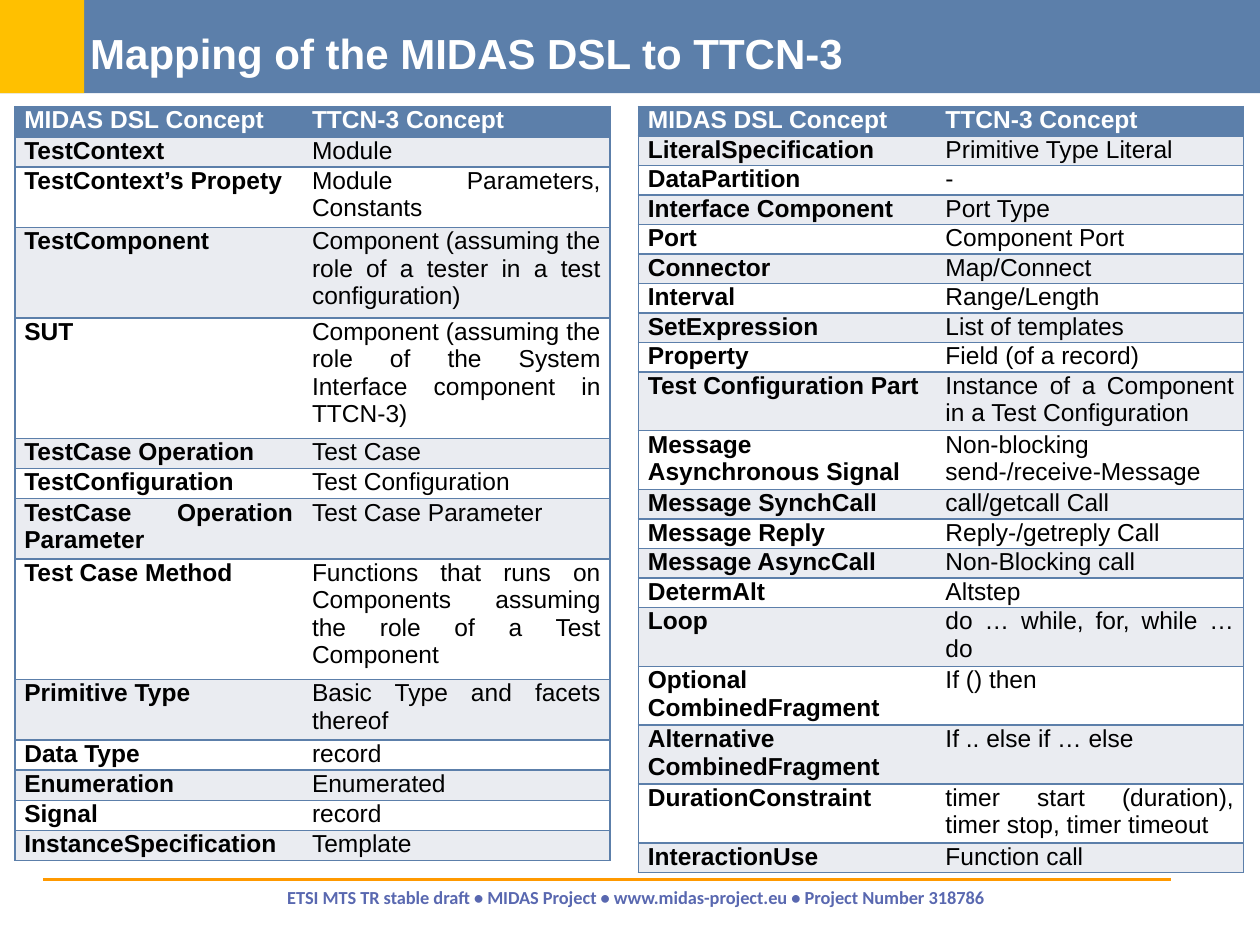
from lxml.etree import SubElement
from pptx import Presentation
from pptx.dml.color import RGBColor
from pptx.enum.shapes import MSO_CONNECTOR, MSO_SHAPE
from pptx.enum.text import MSO_ANCHOR, PP_ALIGN
from pptx.oxml.ns import qn
from pptx.util import Cm, Pt

BLUE = RGBColor(0x5C, 0x7F, 0xAA)
GOLD = RGBColor(0xFF, 0xC0, 0x00)
ORANGE = RGBColor(0xFF, 0x99, 0x00)
VIOLET = RGBColor(0x59, 0x68, 0xB0)
BAND = RGBColor(0xEA, 0xEC, 0xF1)
WHITE = RGBColor(0xFF, 0xFF, 0xFF)
BLACK = RGBColor(0x00, 0x00, 0x00)

HEAD = ("MIDAS DSL Concept", "TTCN-3 Concept", 1)

# Each row: DSL concept, TTCN-3 concept, number of text lines
LEFT = [
    HEAD,
    ("TestContext", "Module", 1),
    ("TestContext’s Propety", "Module Parameters, Constants", 2),
    ("TestComponent", "Component (assuming the role of a tester in a test configuration)", 3),
    ("SUT", "Component (assuming the role of the System Interface component in TTCN-3)", 4),
    ("TestCase Operation", "Test Case", 1),
    ("TestConfiguration", "Test Configuration", 1),
    ("TestCase Operation Parameter", "Test Case Parameter", 2),
    ("Test Case Method",
     "Functions that runs on Components assuming the role of a Test Component", 4),
    ("Primitive Type", "Basic Type and facets thereof", 2),
    ("Data Type", "record", 1),
    ("Enumeration", "Enumerated", 1),
    ("Signal", "record", 1),
    ("InstanceSpecification", "Template", 1),
]
RIGHT = [
    HEAD,
    ("LiteralSpecification", "Primitive Type Literal", 1),
    ("DataPartition", "-", 1),
    ("Interface Component", "Port Type", 1),
    ("Port", "Component Port", 1),
    ("Connector", "Map/Connect", 1),
    ("Interval", "Range/Length", 1),
    ("SetExpression", "List of templates", 1),
    ("Property", "Field (of a record)", 1),
    ("Test Configuration Part", "Instance of a Component in a Test Configuration", 2),
    ("Message Asynchronous Signal", "Non-blocking send-/receive-Message", 2),
    ("Message SynchCall", "call/getcall Call", 1),
    ("Message Reply", "Reply-/getreply Call", 1),
    ("Message AsyncCall", "Non-Blocking call", 1),
    ("DetermAlt", "Altstep", 1),
    ("Loop", "do … while, for, while … do", 2),
    ("Optional CombinedFragment", "If () then", 2),
    ("Alternative CombinedFragment", "If .. else if … else", 2),
    ("DurationConstraint", "timer start (duration), timer stop, timer timeout", 2),
    ("InteractionUse", "Function call", 1),
]


class Deck:
    face = "Arial"
    size = 14

    def __init__(self, slide):
        self.slide = slide

    def font(self, para, size, color, bold=True, face=face):
        font = para.font
        font.name, font.size, font.bold = face, Pt(size), bold
        font.color.rgb = color

    def rect(self, x, y, w, h, color):
        box = self.slide.shapes.add_shape(MSO_SHAPE.RECTANGLE, Cm(x), Cm(y), Cm(w), Cm(h))
        box.shadow.inherit = False
        box.fill.solid()
        box.fill.fore_color.rgb = color
        box.line.fill.background()

    def line(self, x1, y1, x2, y2, color, width):
        rule = self.slide.shapes.add_connector(
            MSO_CONNECTOR.STRAIGHT, Cm(x1), Cm(y1), Cm(x2), Cm(y2))
        rule.line.color.rgb = color
        rule.line.width = Pt(width)
        SubElement(rule.element.spPr, qn("a:effectLst"))

    def text(self, x, y, w, h, words, size, color, face=face):
        frame = self.slide.shapes.add_textbox(Cm(x), Cm(y), Cm(w), Cm(h)).text_frame
        frame.word_wrap = True
        frame.vertical_anchor = MSO_ANCHOR.MIDDLE
        para = frame.paragraphs[0]
        para.text = words
        self.font(para, size, color, face=face)

    def edge(self, cell, side, color=None):
        ln = SubElement(cell._tc.get_or_add_tcPr(), qn(f"a:ln{side}"), w=str(Pt(1)))
        if color is None:
            SubElement(ln, qn("a:noFill"))
        else:
            fill = SubElement(ln, qn("a:solidFill"))
            SubElement(fill, qn("a:srgbClr"), val=str(color))

    def cell(self, cell, words, fill, color, bold, outer):
        cell.margin_left = cell.margin_right = Cm(0.19)
        cell.margin_top = cell.margin_bottom = 0
        for side in "LRTB":
            self.edge(cell, side, BLUE if side in outer else None)
        cell.fill.solid()
        cell.fill.fore_color.rgb = fill
        para = cell.text_frame.paragraphs[0]
        para.text = words
        para.alignment = PP_ALIGN.JUSTIFY
        self.font(para, self.size, color, bold)

    def table(self, x, y, cols, high, rows):
        unit = high / sum(lines for *_, lines in rows)
        grid = self.slide.shapes.add_table(
            len(rows), len(cols), Cm(x), Cm(y), Cm(sum(cols)), Cm(high)).table
        grid.horz_banding = False
        for col, width in zip(grid.columns, cols):
            col.width = Cm(width)
        for i, (*pair, lines) in enumerate(rows):
            grid.rows[i].height = Cm(unit * lines)
            head = i == 0
            fill = BLUE if head else BAND if i % 2 else WHITE
            color = WHITE if head else BLACK
            for j, words in enumerate(pair):
                self.cell(grid.cell(i, j), words, fill, color,
                          head or j == 0, "RTB" if j else "LTB")


def main():
    show = Presentation()
    show.slide_width, show.slide_height = Cm(25.4), Cm(19.05)
    deck = Deck(show.slides.add_slide(show.slide_layouts[6]))

    # Title bar
    deck.rect(0, 0, 25.4, 1.88, BLUE)
    deck.rect(0, 0, 1.7, 1.88, GOLD)
    deck.text(1.57, 0.41, 23.83, 1.3, "Mapping of the MIDAS DSL to TTCN-3", 24, WHITE)

    # Footer
    deck.line(23.6, 17.73, 0.86, 17.73, ORANGE, 1.5)
    deck.text(5.54, 17.73, 14.96, 0.71,
              "ETSI MTS TR stable draft • MIDAS Project • www.midas-project.eu"
              " • Project Number 318786", 10.5, VIOLET, "Calibri")

    # Mapping tables
    deck.table(0.3, 2.15, (5.8, 6.2), 15.2, LEFT)
    deck.table(12.87, 2.15, (6, 6.2), 15.2, RIGHT)

    show.save("out.pptx")


if __name__ == "__main__":
    main()
